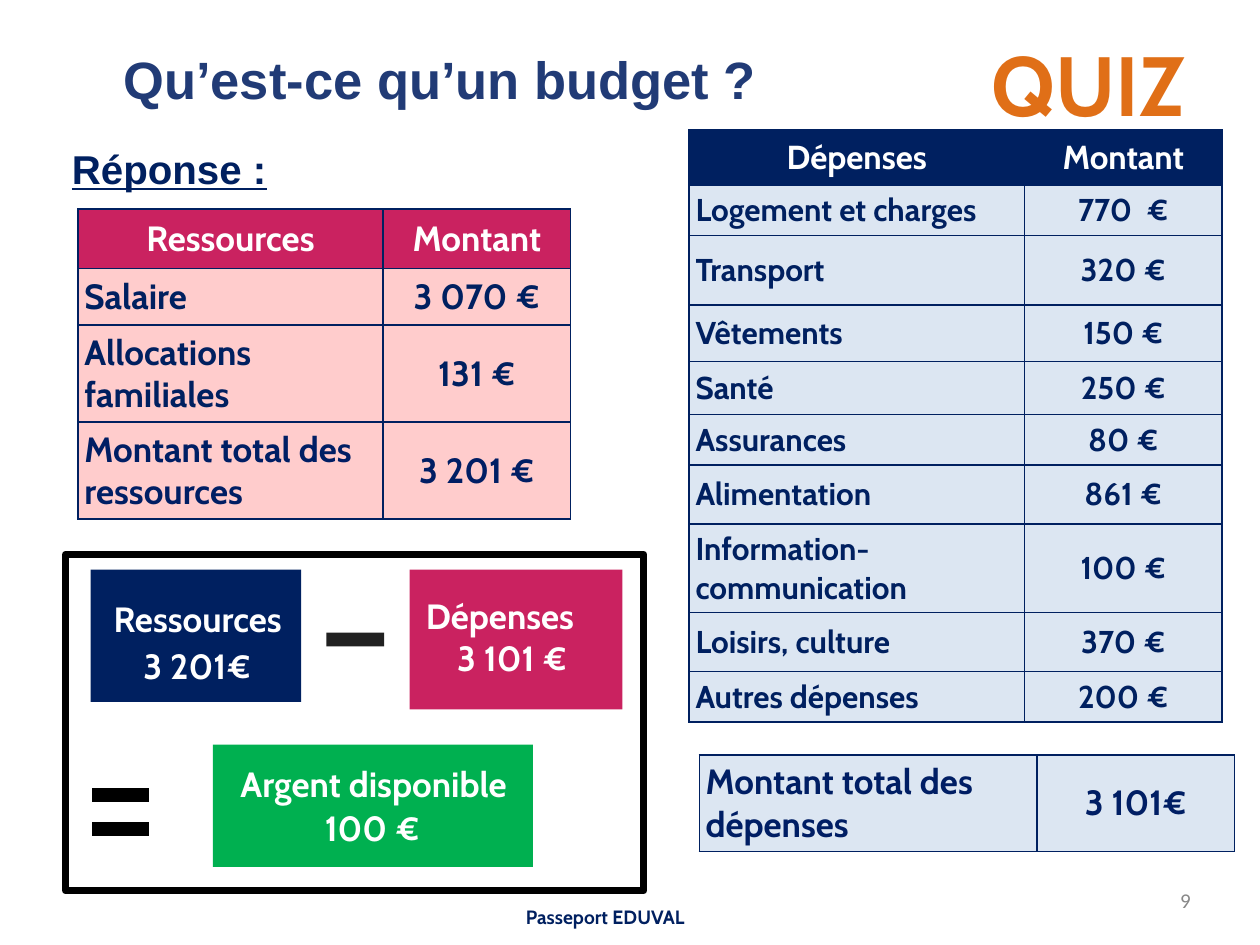
import pptx
import pptx.util
import pptx.dml.color
import pptx.enum.shapes
import pptx.enum.text
import pptx.oxml
import pptx.oxml.ns

Inches = pptx.util.Inches
ALIGN = pptx.enum.text.PP_ALIGN
ANCHOR = pptx.enum.text.MSO_ANCHOR
COLORS = {
    "navy": "002060", "ink": "001E64", "title": "213B76", "orange": "E06F17",
    "pink": "CA2260", "rose": "FFCCCC", "pale": "DCE6F2", "green": "00B050",
    "dark": "212121", "black": "000000", "white": "FFFFFF", "grey": "888888",
}
RESOURCES = [("Ressources", "Montant"), ("Salaire", "3 070 €"),
             ("Allocations familiales", "131 €")]
EXPENSES = [
    ("Dépenses", "Montant"), ("Logement et charges", "770  €"),
    ("Transport", "320 €"), ("Vêtements", "150 €"), ("Santé", "250 €"),
    ("Assurances", "80 €"), ("Alimentation", "861 €"),
    ("Information-communication", "100 €"), ("Loisirs, culture", "370 €"),
    ("Autres dépenses", "200 €"),
]


def rgb(name):
    return pptx.dml.color.RGBColor.from_string(COLORS[name])


def write(tf, text, size, color, align=ALIGN.LEFT, font="Cabin", bold=True):
    p = tf.paragraphs[0]
    p.alignment = align
    r = p.add_run()
    r.text = text
    r.font.name = font
    r.font.size = pptx.util.Pt(size)
    r.font.bold = bold
    r.font.color.rgb = rgb(color)
    return p


def set_frame(tf, anchor, wrap=True):
    tf.word_wrap = wrap
    tf.vertical_anchor = anchor
    tf.margin_left = tf.margin_right = Inches(0.05)
    tf.margin_top = tf.margin_bottom = Inches(0.05)


def add_label(s, box, text, size, color, align=ALIGN.CENTER,
              anchor=ANCHOR.MIDDLE, wrap=True, **style):
    sp = s.shapes.add_textbox(*map(Inches, box))
    set_frame(sp.text_frame, anchor, wrap)
    return write(sp.text_frame, text, size, color, align, **style)


def add_block(s, box, fill=None, line=None, width=1):
    sp = s.shapes.add_shape(pptx.enum.shapes.MSO_SHAPE.RECTANGLE, *map(Inches, box))
    sp.shadow.inherit = False
    if fill:
        sp.fill.solid()
        sp.fill.fore_color.rgb = rgb(fill)
    else:
        sp.fill.background()
    if line:
        sp.line.color.rgb = rgb(line)
        sp.line.width = pptx.util.Pt(width)
    else:
        sp.line.fill.background()


def set_borders(cell):
    tc_pr = cell._tc.get_or_add_tcPr()
    for i, side in enumerate(("lnL", "lnR", "lnT", "lnB")):
        tc_pr.insert(i, pptx.oxml.parse_xml(
            f'<a:{side} {pptx.oxml.ns.nsdecls("a")} w="12700"><a:solidFill>'
            f'<a:srgbClr val="{COLORS["navy"]}"/></a:solidFill></a:{side}>'))


def add_amounts(s, box, rows, heights, amount_width, fill, size,
                header=None, header_size=20, color="navy"):
    shape = s.shapes.add_table(len(rows), 2, *map(Inches, box))
    table = shape.table
    table.first_row = header is not None
    table.horz_banding = False
    table.columns[0].width = Inches(box[2] - amount_width)
    table.columns[1].width = Inches(amount_width)
    for i, (row, height) in enumerate(zip(rows, heights)):
        table.rows[i].height = Inches(height)
        is_header = header is not None and i == 0
        for j, text in enumerate(row):
            cell = table.cell(i, j)
            cell.vertical_anchor = ANCHOR.MIDDLE
            cell.margin_left = cell.margin_right = Inches(0.05)
            cell.margin_top = cell.margin_bottom = Inches(0.05)
            cell.fill.solid()
            cell.fill.fore_color.rgb = rgb(header if is_header else fill)
            set_borders(cell)
            write(cell.text_frame, text, header_size if is_header else size,
                  "white" if is_header else color,
                  ALIGN.CENTER if is_header or j else ALIGN.LEFT)


def add_heading(s, box):
    x, y, w, h = box
    title = s.shapes.title
    title.left, title.top, title.width, title.height = map(Inches, (x + 0.26, y, 5.72, h))
    set_frame(title.text_frame, ANCHOR.TOP)
    write(title.text_frame, "Qu’est-ce qu’un budget ?", 30, "title", font="Arial")
    add_label(s, (x + w - 1.75, y - 0.11, 1.75, 0.91), "QUIZ", 48, "orange",
              ALIGN.LEFT, ANCHOR.TOP)
    p = add_label(s, (x - 0.15, y + 0.78, 1.68, 0.46), "Réponse :", 23, "navy",
                  ALIGN.LEFT, ANCHOR.TOP, font="Arial")
    p.space_before = pptx.util.Pt(5)
    p.runs[0].font.underline = True


def add_resources(s, box):
    x, y, w, h = box
    total_h = 0.77
    add_amounts(s, (x, y, w, h - total_h), RESOURCES, (0.47, 0.45, 0.77), 1.49,
                "rose", 20, header="pink")
    add_amounts(s, (x, y + h - total_h, w, total_h),
                [("Montant total des ressources", "3 201 €")], [total_h], 1.49,
                "rose", 20, color="ink")


def add_expenses(s, box):
    x, y, w, h = box
    total_h = 0.77
    heights = (0.44, 0.4, 0.55, 0.45, 0.42, 0.4, 0.47, 0.7, 0.47, 0.4)
    add_amounts(s, (x, y, w, sum(heights)), EXPENSES, heights, 1.57,
                "pale", 18, header="navy", header_size=19)
    add_amounts(s, (x + 0.08, y + h - total_h, w + 0.02, total_h),
                [("Montant total des dépenses", "3 101€")], [total_h], 1.57,
                "pale", 20, color="ink")


def add_equals(s, box):
    x, y, w, h = box
    bar = 0.14
    builder = None
    for top in (y, y + h - bar):
        if builder is None:
            builder = s.shapes.build_freeform(Inches(x), Inches(top))
        else:
            builder.move_to(Inches(x), Inches(top))
        corners = [(x + w, top), (x + w, top + bar), (x, top + bar)]
        builder.add_line_segments([(Inches(a), Inches(b)) for a, b in corners])
    sp = builder.convert_to_shape()
    sp.shadow.inherit = False
    sp.fill.solid()
    sp.fill.fore_color.rgb = rgb("black")
    sp.line.color.rgb = rgb("white")
    sp.line.width = pptx.util.Pt(2)


def add_equation(s, box):
    x, y, w, h = box
    blocks = [((0.2, 0.12, 1.67, 1.05), "navy"), ((2.73, 0.12, 1.69, 1.11), "pink"),
              ((2.07, 0.62, 0.46, 0.11), "dark"), ((1.17, 1.51, 2.54, 0.97), "green")]
    for (dx, dy, bw, bh), fill in blocks:
        add_block(s, (x + dx, y + dy, bw, bh), fill)
    add_equals(s, (x + 0.2, y + 1.84, 0.48, 0.41))
    add_block(s, box, line="black", width=4)
    labels = [("Ressources", 0.04, 0.29, 2.02), ("3 201€", 0.37, 0.66, 1.35),
              ("3 101 €", 2.81, 0.6, 1.47),
              ("Argent disponible", 1.07, 1.6, 2.75), ("100 €", 1.76, 1.95, 1.35)]
    for text, dx, dy, bw in labels:
        add_label(s, (x + dx, y + dy, bw, 0.44), text, 20, "white")
    add_label(s, (x + 2.81, y + 0.27, 1.61, 0.44), "Dépenses", 20, "white",
              ALIGN.LEFT, ANCHOR.TOP)


def add_footer(s, box):
    x, y, w, h = box
    add_label(s, (x, y + 0.13, 3.17, 0.29), "Passeport EDUVAL", 11, "navy")
    add_label(s, (x + w - 0.29, y, 0.29, 0.29), "9", 12, "grey", ALIGN.RIGHT,
              wrap=False, font="Calibri", bold=False)


def main():
    prs = pptx.Presentation()
    prs.slide_width, prs.slide_height = Inches(10), Inches(7.5)
    s = prs.slides.add_slide(prs.slide_layouts[5])
    add_heading(s, (0.67, 0.32, 8.9, 0.61))
    add_resources(s, (0.62, 1.66, 3.91, 2.46))
    add_expenses(s, (5.47, 1.03, 4.23, 5.73))
    add_equation(s, (0.52, 4.4, 4.59, 2.67))
    add_footer(s, (3.22, 7, 6.28, 0.42))
    prs.save("out.pptx")


if __name__ == "__main__":
    main()
